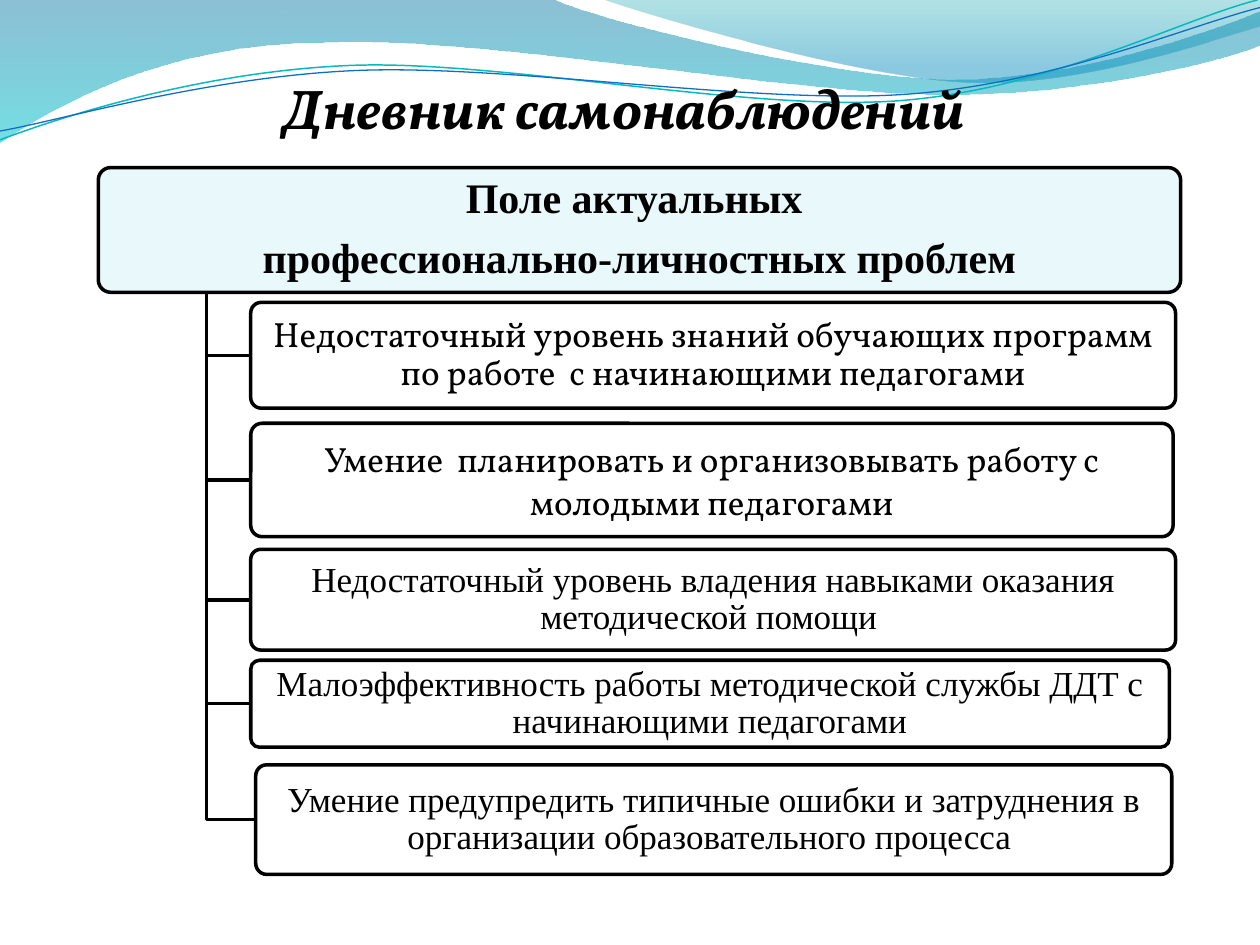
from lxml import etree
from pptx import Presentation
from pptx.dml.color import RGBColor
from pptx.enum import shapes as kinds, text
from pptx.oxml.ns import qn
from pptx.util import Inches, Pt

BLACK = RGBColor(0, 0, 0)
WHITE = RGBColor(255, 255, 255)
PALE = RGBColor(0xE9, 0xF9, 0xFB)
DEEP = RGBColor(0x00, 0x74, 0xA1)
AQUA = RGBColor(0x00, 0xC6, 0xCF)
TEAL = RGBColor(0x00, 0xA1, 0xA9)
BLUE = RGBColor(0x00, 0x8B, 0xBF)
CYAN = RGBColor(0x0A, 0xB8, 0xBF)
NAVY = RGBColor(0x0F, 0x6F, 0xC6)
SERIF = "Times New Roman"
BOOK = "Vollkorn"

BAND = [(0, 0), (4.4, 0),
        (4.76, 0.17, 6.64, 0.63, 7.58, 0.63), (8.53, 0.63, 9.58, 0.26, 10, 0.09),
        (10, 0.36), (9.83, 0.44, 8.7, 0.76, 7.46, 0.75),
        (6.22, 0.75, 3.82, 0.28, 2.57, 0.34), (1.29, 0.35, 0.46, 0.83, 0, 1.13)]
CREST = [(4.79, 0), (5.09, 0.11, 6.82, 0.62, 7.69, 0.65),
         (8.56, 0.69, 9.61, 0.32, 10, 0.21), (10, 0)]
UPPER = [(0, 1.11), (0.48, 0.93, 1.58, 0.57, 2.77, 0.52),
         (3.95, 0.47, 5.93, 0.89, 7.13, 0.8), (8.33, 0.71, 9.38, 0.15, 9.98, 0)]
LOWER = [(0, 1.04), (0.47, 0.96, 1.64, 0.61, 2.83, 0.56),
         (4.03, 0.51, 5.97, 0.83, 7.17, 0.75), (8.36, 0.67, 9.41, 0.21, 10, 0.06)]

HEAD = ["Поле актуальных ", "профессионально-личностных проблем"]
ITEMS = [
    ((1.99, 2.4, 7.34, 0.84), BOOK, 0.9,
     "Недостаточный уровень знаний обучающих программ по работе  с начинающими педагогами"),
    ((1.99, 3.36, 7.32, 0.9), BOOK, 1.0,
     "Умение  планировать и организовывать работу с молодыми педагогами"),
    ((1.99, 4.36, 7.34, 0.8), SERIF, 0.9,
     "Недостаточный уровень владения навыками оказания методической помощи "),
    ((1.99, 5.24, 7.29, 0.69), SERIF, 0.9,
     "Малоэффективность работы методической службы ДДТ с начинающими педагогами"),
    ((2.03, 6.07, 7.27, 0.87), SERIF, 0.9,
     "Умение предупредить типичные ошибки и затруднения в организации образовательного процесса "),
]


def outline(slide, parts, close=False):
    """Draw a freeform whose six-number parts are Bezier curves."""
    ends = [(Inches(part[-2]), Inches(part[-1])) for part in parts]
    pen = slide.shapes.build_freeform(*ends[0])
    pen.add_line_segments(ends[1:], close=close)
    shape = pen.convert_to_shape()
    shape.shadow.inherit = False
    sides = list(shape._element.iter(qn("a:lnTo")))
    for side, part in zip(sides, parts[1:]):
        if len(part) == 6:
            bend(shape, side, part)
    return shape


def bend(shape, side, part):
    """Turn a straight side of a freeform into a curve."""
    side.tag = qn("a:cubicBezTo")
    for i in (0, 2):
        point = etree.Element(qn("a:pt"))
        point.set("x", str(Inches(part[i]) - shape.left))
        point.set("y", str(Inches(part[i + 1]) - shape.top))
        side.insert(i // 2, point)


def stroke(slide, parts, color, width):
    """Draw an open line."""
    shape = outline(slide, parts)
    shape.fill.background()
    shape.line.color.rgb = color
    shape.line.width = Pt(width)


def wash(slide, parts, stops):
    """Draw a borderless area with a downward see-through gradient."""
    shape = outline(slide, parts, close=True)
    shape.line.fill.background()
    shape.fill.gradient()
    shape.fill.gradient_angle = 270
    for stop, (place, color, _) in zip(shape.fill.gradient_stops, stops):
        stop.position = place
        stop.color.rgb = color
    tones = shape._element.spPr.iter(qn("a:srgbClr"))
    for tone, (_, _, alpha) in zip(tones, stops):
        etree.SubElement(tone, qn("a:alpha")).set("val", str(alpha * 1000))


def waves(slide):
    """Draw the wave band along the top edge."""
    wash(slide, BAND, [(0, DEEP, 45), (1, AQUA, 55)])
    wash(slide, CREST, [(0, TEAL, 30), (0.8, BLUE, 45)])
    stroke(slide, UPPER, CYAN, 0.85)
    stroke(slide, LOWER, NAVY, 0.75)


def heading(slide, box):
    """Place the slide title above the waves."""
    title = slide.shapes.title
    slide.shapes._spTree.append(title._element)
    title.left, title.top, title.width, title.height = map(Inches, box)
    title.text = "Дневник самонаблюдений"
    title.text_frame.vertical_anchor = text.MSO_ANCHOR.MIDDLE
    para = title.text_frame.paragraphs[0]
    para.alignment = text.PP_ALIGN.CENTER
    font = para.font
    font.name, font.size = BOOK, Pt(32)
    font.bold = font.italic = True
    font.color.rgb = BLACK


def panel(slide, box, lines, face, size, fill, pitch=0.9, bold=False):
    """Draw a rounded box with centred text."""
    shape = slide.shapes.add_shape(
        kinds.MSO_SHAPE.ROUNDED_RECTANGLE, *map(Inches, box))
    shape.adjustments[0] = 0.1
    shape.shadow.inherit = False
    shape.fill.solid()
    shape.fill.fore_color.rgb = fill
    shape.line.color.rgb = BLACK
    shape.line.width = Pt(2)
    frame = shape.text_frame
    frame.word_wrap = True
    frame.vertical_anchor = text.MSO_ANCHOR.MIDDLE
    frame.margin_left = frame.margin_right = Inches(0.04)
    frame.margin_top = frame.margin_bottom = Inches(0.03)
    frame.text = "\n".join(lines)
    for para in frame.paragraphs:
        para.alignment = text.PP_ALIGN.CENTER
        para.line_spacing = pitch
        para.space_after = Pt(size * 0.35)
        para.font.name, para.font.size = face, Pt(size)
        para.font.bold = bold
        para.font.color.rgb = BLACK


def tree(slide, box):
    """Draw the head box and the items that branch from it."""
    left, top, width, height = box
    trunk, base = left + width / 10, top + height
    panel(slide, box, HEAD, SERIF, 24, PALE, bold=True)
    for place, face, pitch, words in ITEMS:
        mid = place[1] + place[3] / 2
        stroke(slide, [(trunk, base), (trunk, mid), (place[0], mid)], BLACK, 2)
        panel(slide, place, [words], face, 20, WHITE, pitch)


def main():
    """Build the slide and save it."""
    deck = Presentation()
    deck.slide_width, deck.slide_height = Inches(10), Inches(7.5)
    slide = deck.slides.add_slide(deck.slide_layouts[5])
    waves(slide)
    heading(slide, (0.23, 0.45, 9.45, 0.8))
    tree(slide, (0.78, 1.33, 8.59, 0.99))
    deck.save("out.pptx")


if __name__ == "__main__":
    main()
